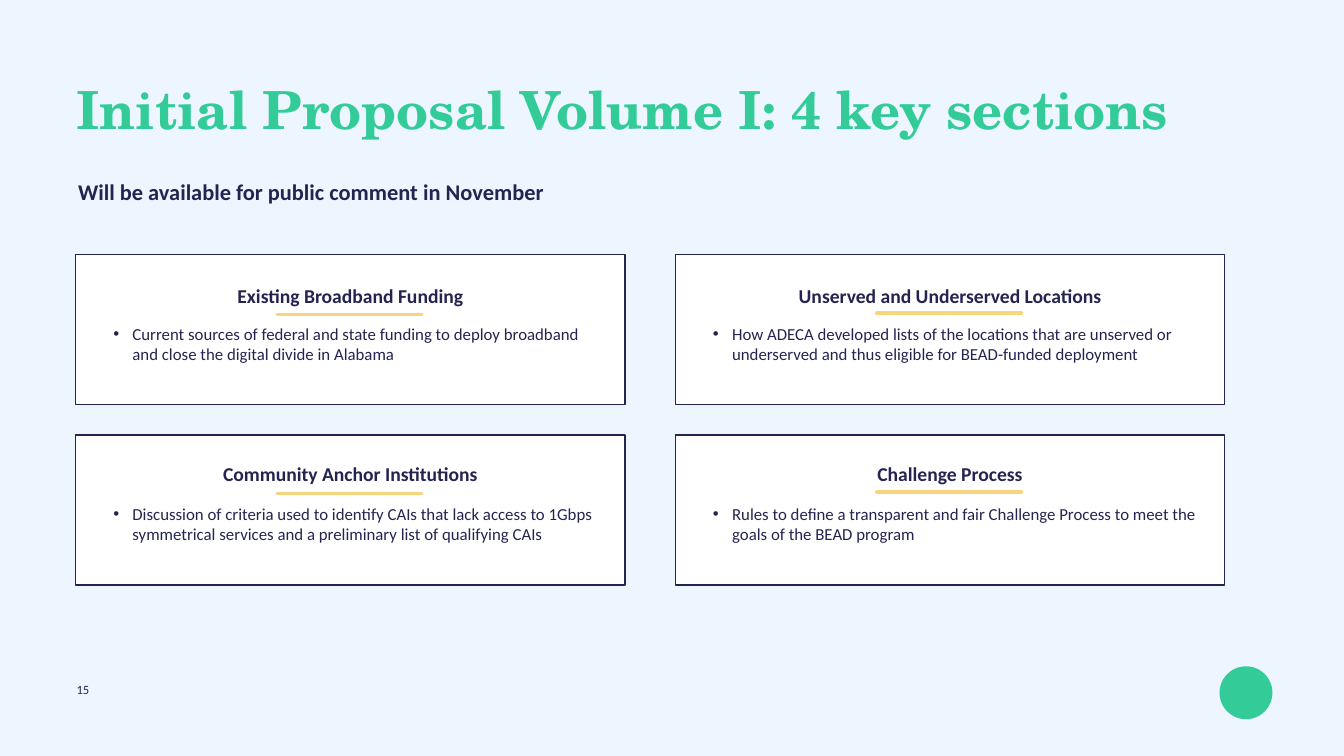
from lxml import etree
from pptx import Presentation
from pptx import util as u
from pptx.dml.color import RGBColor
from pptx.enum import shapes, text
from pptx.oxml.ns import qn

PX = 9144
COLORS = {"back": "EDF5FF", "card": "FFFFFF", "ink": "242451",
          "green": "33CC99", "rule": "F8D57C"}
CARD_W, CARD_H = 1090, 298
COL_X = (150, 1340)
ROW_Y = (505, 863)
TITLE_DY = (58, 53)
RULE_DY = ((119, 116), (116, 113))
CARDS = (
    (("Existing Broadband Funding",
      "Current sources of federal and state funding to deploy broadband "
      "and close the digital divide in Alabama"),
     ("Unserved and Underserved Locations",
      "How ADECA developed lists of the locations that are unserved or "
      "underserved and thus eligible for BEAD-funded deployment")),
    (("Community Anchor Institutions",
      "Discussion of criteria used to identify CAIs that lack access to 1Gbps "
      "symmetrical services and a preliminary list of qualifying CAIs"),
     ("Challenge Process",
      "Rules to define a transparent and fair Challenge Process to meet the "
      "goals of the BEAD program")),
)


def px(*values):
    return [u.Emu(v * PX) for v in values]


def rgb(name):
    return RGBColor.from_string(COLORS[name])


def add_shape(s, kind, box, fill, line=None):
    sp = s.shapes.add_shape(kind, *px(*box))
    sp.shadow.inherit = False
    sp.fill.solid()
    sp.fill.fore_color.rgb = rgb(fill)
    if line:
        sp.line.color.rgb = rgb(line)
        sp.line.width = u.Pt(2)
    else:
        sp.line.fill.background()


def add_bullet(p):
    ppr = p._p.get_or_add_pPr()
    indent = u.Inches(0.38)
    ppr.set("marL", str(indent))
    ppr.set("indent", str(-indent))
    color = etree.SubElement(ppr, qn("a:buClr"))
    etree.SubElement(color, qn("a:srgbClr"), val=COLORS["ink"])
    etree.SubElement(ppr, qn("a:buFont"), typeface="Arial")
    etree.SubElement(ppr, qn("a:buChar"), char="•")


def add_text(s, box, words, size, color="ink", font="Calibri", bold=False,
             align=text.PP_ALIGN.LEFT, spacing=None, bullet=False):
    tf = s.shapes.add_textbox(*px(*box)).text_frame
    tf.word_wrap = True
    tf.text = words
    p = tf.paragraphs[0]
    p.alignment = align
    if spacing:
        p.line_spacing = spacing
    if bullet:
        add_bullet(p)
    r = p.runs[0]
    r.font.name = font
    r.font.size = u.Pt(size)
    r.font.bold = bold
    r.font.color.rgb = rgb(color)


def add_rule(s, x, y, w):
    line = s.shapes.add_connector(shapes.MSO_CONNECTOR.STRAIGHT,
                                  *px(x, y, x + w, y))
    line.line.color.rgb = rgb("rule")
    line.line.width = u.Pt(5)
    line.line._get_or_add_ln().set("cap", "rnd")
    etree.SubElement(line._element.spPr, qn("a:effectLst"))


def add_header(s, x, y, w):
    add_text(s, (x, y, w, 124), "Initial Proposal Volume I: 4 key sections", 75,
             "green", "TeX Gyre Schola", True, spacing=0.9)
    add_text(s, (x + 3, y + 169, w, 81),
             "Will be available for public comment in November", 32,
             bold=True, spacing=1.31)


def add_card(s, x, y, title, body, title_dy, rule_dy):
    add_shape(s, shapes.MSO_SHAPE.RECTANGLE, (x, y, CARD_W, CARD_H), "card", "ink")
    add_text(s, (x, y + title_dy, CARD_W, 53), title, 28, bold=True,
             align=text.PP_ALIGN.CENTER, spacing=0.9)
    add_text(s, (x + 65, y + 132, 990, 91), body, 24, bullet=True)
    add_rule(s, x + 400, y + rule_dy, 287)


def add_footer(s, x, y, w):
    add_text(s, (x, y + 30, 1918, 37), "15", 18, spacing=0.9)
    add_shape(s, shapes.MSO_SHAPE.OVAL, (x + w - 105, y, 105, 105), "green")


def main():
    prs = Presentation()
    prs.slide_width, prs.slide_height = px(2667, 1500)
    s = prs.slides.add_slide(prs.slide_layouts[6])
    s.background.fill.solid()
    s.background.fill.fore_color.rgb = rgb("back")
    add_header(s, 142, 163, 2376)
    for row, cards in enumerate(CARDS):
        for col, (title, body) in enumerate(cards):
            add_card(s, COL_X[col], ROW_Y[row], title, body,
                     TITLE_DY[row], RULE_DY[row][col])
    add_footer(s, 142, 1322, 2383)
    prs.save("out.pptx")


if __name__ == "__main__":
    main()
